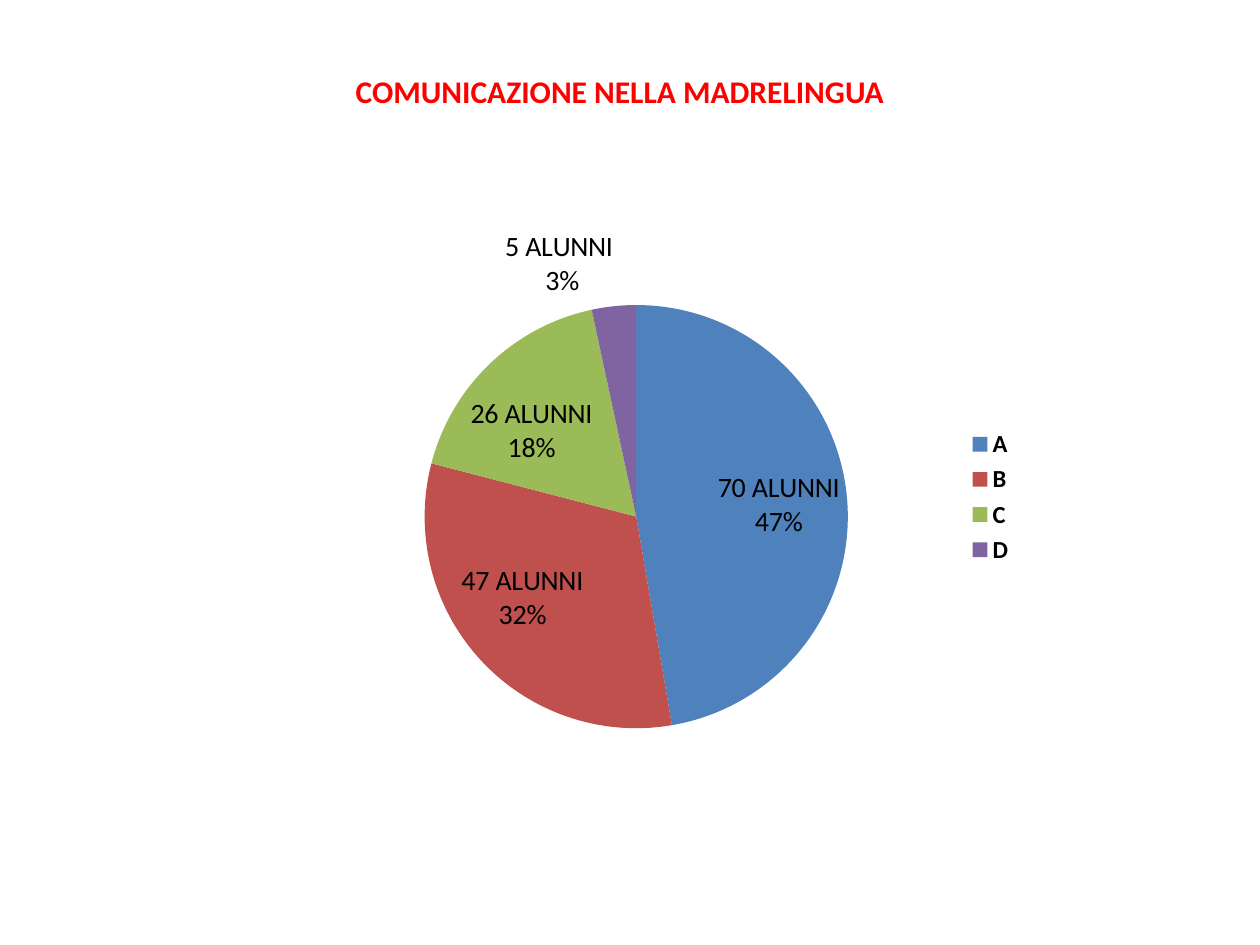
from lxml.etree import SubElement
from pptx import Presentation
from pptx.chart.data import CategoryChartData
from pptx.dml.color import RGBColor
from pptx.enum.chart import XL_CHART_TYPE, XL_LABEL_POSITION, XL_LEGEND_POSITION
from pptx.enum.text import PP_ALIGN
from pptx.oxml.ns import qn
from pptx.util import Emu, Pt

PX = 914400 // 126
FONT = "Calibri"
BLACK = RGBColor(0x00, 0x00, 0x00)
RED = RGBColor(0xFF, 0x00, 0x00)
BLUE = RGBColor(0x4F, 0x81, 0xBD)
BRICK = RGBColor(0xC0, 0x50, 0x4D)
GREEN = RGBColor(0x9B, 0xBB, 0x59)
PURPLE = RGBColor(0x80, 0x64, 0xA2)

INSIDE = XL_LABEL_POSITION.INSIDE_END
OUTSIDE = XL_LABEL_POSITION.OUTSIDE_END
GRADES = [
    ("A", 70, "70 ALUNNI 47%", BLUE, INSIDE, (0, 0.01)),
    ("B", 47, "47 ALUNNI 32%", BRICK, INSIDE, (-0.03, -0.04)),
    ("C", 26, "26 ALUNNI 18%", GREEN, INSIDE, (-0.03, 0.05)),
    ("D", 5, "5 ALUNNI\n 3%", PURPLE, OUTSIDE, None),
]


class SlideBuilder:
    def __init__(self, deck):
        self.page = deck.slides.add_slide(deck.slide_layouts[6])

    def style(self, font, size, color=BLACK, bold=False):
        font.name = FONT
        font.size = Pt(size)
        font.bold = bold
        font.color.rgb = color

    def title(self, text, *bounds):
        box = self.page.shapes.add_textbox(*(Emu(n * PX) for n in bounds))
        box.text_frame.word_wrap = True
        box.text_frame.text = text
        para = box.text_frame.paragraphs[0]
        para.alignment = PP_ALIGN.CENTER
        self.style(para.runs[0].font, 18, RED, True)

    def pie(self, grades, *bounds):
        data = CategoryChartData()
        data.categories = [grade[0] for grade in grades]
        data.add_series("Series 1", [grade[1] for grade in grades])
        chart = self.page.shapes.add_chart(
            XL_CHART_TYPE.PIE, *(Emu(n * PX) for n in bounds), data
        ).chart
        self.style(chart.font, 10)
        chart.has_title = False
        chart.has_legend = True
        chart.legend.position = XL_LEGEND_POSITION.RIGHT
        chart.legend.include_in_layout = False
        self.style(chart.legend.font, 14, bold=True)
        area = chart._chartSpace.chart.plotArea
        self.place(area, 0, layoutTarget="inner", xMode="edge", yMode="edge",
                   x=0.26, y=0.16, w=0.52, h=0.75)

        chart.plots[0].vary_by_categories = True
        series = chart.plots[0].series[0]
        series.data_labels.show_value = True
        series.data_labels.show_percentage = True
        self.style(series.data_labels.font, 16, bold=True)
        for index, (name, pupils, text, color, position, shift) in enumerate(grades):
            point = series.points[index]
            point.format.fill.solid()
            point.format.fill.fore_color.rgb = color
            self.label(point.data_label, text, position)
            if shift:
                element = point.data_label._get_or_add_dLbl()
                self.place(element, 1, x=shift[0], y=shift[1])

    def label(self, label, text, position):
        label.text_frame.text = text
        label.position = position
        element = label._get_or_add_dLbl()
        element.find(qn("c:showPercent")).set("val", "1")
        for para in label.text_frame.paragraphs:
            for span in para.runs:
                self.style(span.font, 16)

    def place(self, element, order, **settings):
        layout = element.find(qn("c:layout"))
        if layout is None:
            layout = SubElement(element, qn("c:layout"))
            element.insert(order, layout)
        manual = SubElement(layout, qn("c:manualLayout"))
        for name, value in settings.items():
            SubElement(manual, qn(f"c:{name}")).set("val", str(value))


def main():
    deck = Presentation()
    deck.slide_width = Emu(1260 * PX)
    deck.slide_height = Emu(945 * PX)
    builder = SlideBuilder(deck)
    builder.title("COMUNICAZIONE NELLA MADRELINGUA", 273, 66, 694, 50)
    builder.pie(GRADES, 213, 214, 814, 566)
    deck.save("out.pptx")


if __name__ == "__main__":
    main()
